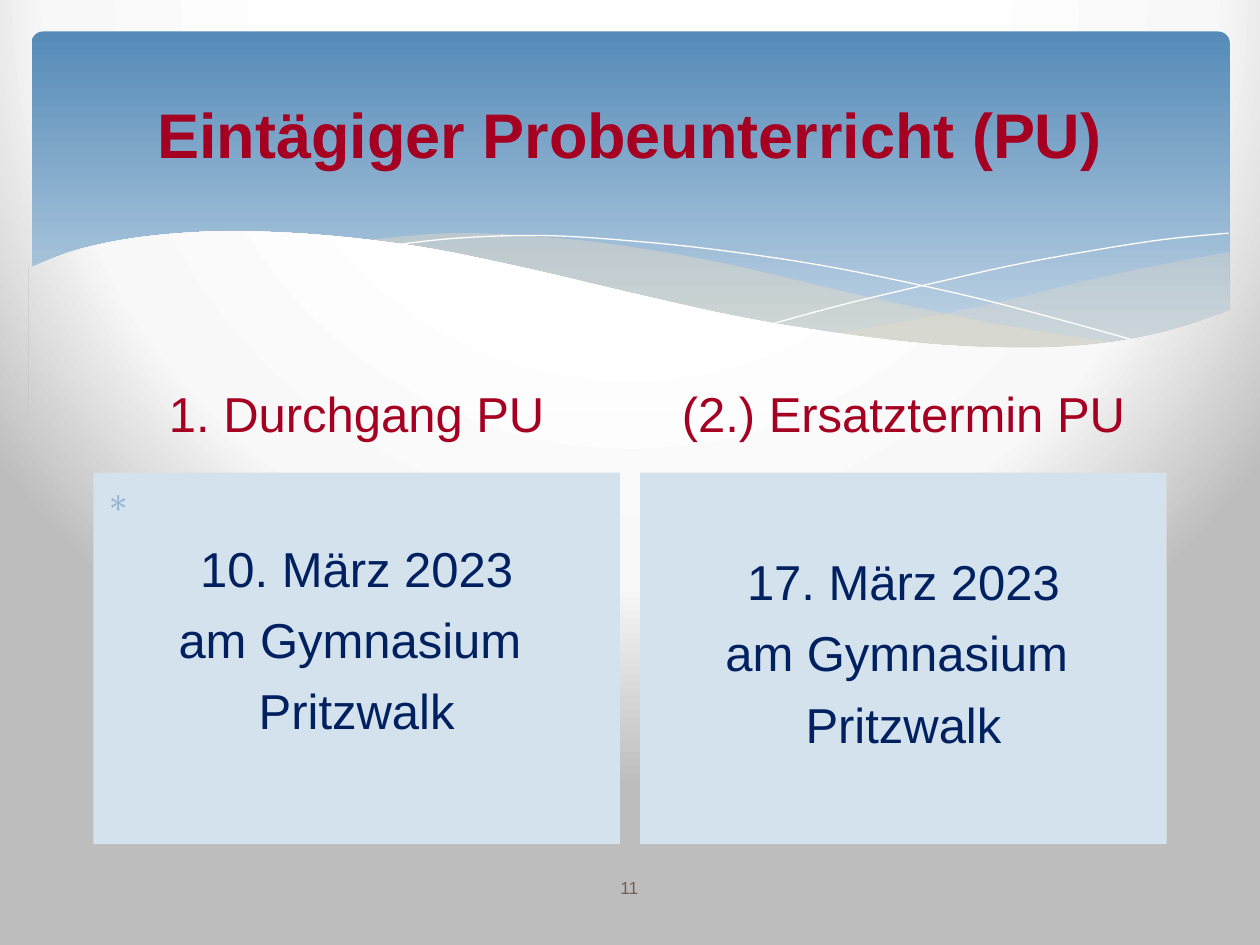
from lxml import etree
from pptx import Presentation
from pptx.dml.color import RGBColor
from pptx.enum.shapes import MSO_SHAPE as Shape
from pptx.enum.text import MSO_ANCHOR as Anchor, PP_ALIGN as Align
from pptx.oxml import parse_xml
from pptx.oxml.ns import nsdecls, qn
from pptx.util import Inches, Pt

COLORS = {
    "red": "A50021", "navy": "002060", "brown": "775F55",
    "panel": "D4E2ED", "bullet": "94B6D2", "sand": "EBDDC3", "white": "FFFFFF",
    "header_top": "558BB8", "header_bottom": "BFD3E4",
}
BACKDROP_STOPS = [(40, "FFFFFF"), (74, "F8F8F8"), (100, "BDBDBD")]
FONT = "Arial"

# Curves are listed from left to right, in inches.
RIGHT_BAND_TOP = [(6.61, 2.65), (7.29, 2.53), (8.05, 2.37), (8.61, 2.23),
                  (9.21, 2.1), (9.76, 2)]
RIGHT_BAND_BOTTOM = [(6.61, 2.65), (7.19, 2.72), (7.81, 2.77), (8.44, 2.77),
                     (8.97, 2.7), (9.42, 2.59), (9.76, 2.47)]
LONG_BAND_TOP = [(2.86, 1.91), (3.61, 1.85), (4.42, 1.89), (5.14, 1.98),
                 (5.84, 2.11), (6.68, 2.31), (7.41, 2.47), (8.07, 2.6),
                 (8.93, 2.73)]
LONG_BAND_BOTTOM = [(2.86, 1.91), (3.62, 2.03), (4.49, 2.22), (5.3, 2.4),
                    (6.01, 2.55), (6.8, 2.68), (7.48, 2.76), (8.18, 2.78),
                    (8.93, 2.73)]
FALLING_LINE = [(3.09, 1.95), (3.63, 1.89), (4.33, 1.87), (5.1, 1.92),
                (5.82, 2), (6.65, 2.13), (7.6, 2.33), (8.31, 2.51), (9.07, 2.72)]
RISING_LINE = [(6.13, 2.57), (6.72, 2.41), (7.48, 2.23), (8.06, 2.1),
               (8.66, 1.99), (9.24, 1.9), (9.75, 1.85)]
WAVE_TOP = [(0.23, 2.13), (0.59, 1.99), (1.06, 1.89), (1.61, 1.84), (2.11, 1.84),
            (2.71, 1.88), (3.4, 1.97), (4.18, 2.13), (5.03, 2.33), (5.79, 2.5),
            (6.48, 2.62), (7.26, 2.72), (7.93, 2.76), (8.5, 2.75), (8.99, 2.69),
            (9.4, 2.59), (9.77, 2.46)]
WAVE_BOTTOM = [(0.23, 3.29), (9.77, 3.29)]


def rgb(name):
    return RGBColor.from_string(COLORS[name])


def box(left, top, width, height):
    return [Inches(v) for v in (left, top, width, height)]


def smooth(points, steps=6):
    """Run a Catmull-Rom curve through the points."""
    padded = [points[0], *points, points[-1]]
    curve = [points[0]]
    for a, b, c, d in zip(padded, padded[1:], padded[2:], padded[3:]):
        for step in range(1, steps + 1):
            t = step / steps
            curve.append(tuple(
                0.5 * (2 * q + (r - p) * t + (2 * p - 5 * q + 4 * r - s) * t ** 2
                       + (3 * q - p - 3 * r + s) * t ** 3)
                for p, q, r, s in zip(a, b, c, d)))
    return curve


def add_outline(slide, points, close):
    corners = [(int(Inches(x)), int(Inches(y))) for x, y in points]
    builder = slide.shapes.build_freeform(*corners[0])
    builder.add_line_segments(corners[1:], close=close)
    outline = builder.convert_to_shape()
    outline.shadow.inherit = False
    return outline


def add_band(slide, top, bottom, opacity):
    band = add_outline(slide, smooth(top) + smooth(bottom)[::-1], True)
    band.fill.solid()
    band.fill.fore_color.rgb = rgb("sand")
    band.line.fill.background()
    sand = band.fill._xPr.find(".//" + qn("a:srgbClr"))
    etree.SubElement(sand, qn("a:alpha"), val=str(opacity * 1000))


def add_hairline(slide, points):
    hairline = add_outline(slide, smooth(points), False)
    hairline.fill.background()
    hairline.line.color.rgb = rgb("white")
    hairline.line.width = Pt(0)


def add_backdrop_wave(slide):
    """Cover the foot of the header with the slide's own background."""
    wave = add_outline(slide, smooth(WAVE_TOP) + WAVE_BOTTOM[::-1], True)
    wave.line.fill.background()
    element = wave._element
    element.remove(element.find(qn("p:style")))
    element.set("useBgFill", "1")


def set_backdrop(slide):
    slide.background.fill.gradient()
    stops = "".join(f'<a:gs pos="{pos * 1000}"><a:srgbClr val="{color}"/></a:gs>'
                    for pos, color in BACKDROP_STOPS)
    radial = parse_xml(
        f'<a:gradFill {nsdecls("a")} rotWithShape="1"><a:gsLst>{stops}</a:gsLst>'
        '<a:path path="circle"><a:fillToRect l="20000" t="-40000" r="20000" '
        'b="140000"/></a:path></a:gradFill>')
    linear = slide._element.find(".//" + qn("a:gradFill"))
    linear.getparent().replace(linear, radial)


def add_header(slide):
    header = slide.shapes.add_shape(Shape.ROUNDED_RECTANGLE, *box(0.25, 0.25, 9.51, 2.7))
    header.adjustments[0] = 0.034
    header.shadow.inherit = False
    header.line.fill.background()
    header.fill.gradient()
    header.fill.gradient_angle = 270
    shades = [("header_top", 0), ("header_bottom", 0.9)]
    for stop, (color, position) in zip(header.fill.gradient_stops, shades):
        stop.color.rgb = rgb(color)
        stop.position = position


def write(paragraph, text, size, color, bold=False, align=Align.CENTER):
    paragraph.alignment = align
    run = paragraph.add_run()
    run.text = text
    run.font.name = FONT
    run.font.size = Pt(size)
    run.font.bold = bold
    run.font.color.rgb = rgb(color)


def add_label(slide, area, text, size, color, bold=False):
    frame = slide.shapes.add_textbox(*box(*area)).text_frame
    frame.word_wrap = True
    frame.vertical_anchor = Anchor.MIDDLE
    write(frame.paragraphs[0], text, size, color, bold)


def add_star_bullet(paragraph):
    write(paragraph, " ", 20, "brown", align=Align.LEFT)
    props = paragraph._p.get_or_add_pPr()
    props.set("marL", str(Inches(0.3)))
    props.set("indent", str(-Inches(0.3)))
    bullet_color = etree.SubElement(props, qn("a:buClr"))
    etree.SubElement(bullet_color, qn("a:srgbClr"), val=COLORS["bullet"])
    etree.SubElement(props, qn("a:buChar"), char="∗")


def add_date_panel(slide, left, date, top_inset, starred):
    panel = slide.shapes.add_shape(Shape.RECTANGLE, *box(left, 3.75, 4.18, 2.95))
    panel.shadow.inherit = False
    panel.fill.solid()
    panel.fill.fore_color.rgb = rgb("panel")
    panel.line.fill.background()
    frame = panel.text_frame
    frame.word_wrap = True
    frame.vertical_anchor = Anchor.TOP
    frame.margin_top = Inches(top_inset)
    paragraph = frame.paragraphs[0]
    if starred:
        add_star_bullet(paragraph)
        paragraph = frame.add_paragraph()
        paragraph.space_before = Pt(7)
    write(paragraph, date, 28, "navy")
    for line in ("am Gymnasium ", "Pritzwalk"):
        paragraph = frame.add_paragraph()
        paragraph.space_before = Pt(7)
        write(paragraph, line, 28, "navy")


def main():
    deck = Presentation()
    deck.slide_width, deck.slide_height = Inches(10), Inches(7.5)
    slide = deck.slides.add_slide(deck.slide_layouts[6])
    set_backdrop(slide)
    add_header(slide)
    add_band(slide, RIGHT_BAND_TOP, RIGHT_BAND_BOTTOM, 29)
    add_band(slide, LONG_BAND_TOP, LONG_BAND_BOTTOM, 40)
    add_hairline(slide, FALLING_LINE)
    add_hairline(slide, RISING_LINE)
    add_backdrop_wave(slide)

    add_label(slide, (0.5, 0.37, 9, 1.37), "Eintägiger Probeunterricht (PU)", 36, "red", True)
    rounds = [
        (0.74, "1. Durchgang PU", "10. März 2023", 0.09, True),
        (5.08, "(2.) Ersatztermin PU", "17. März 2023", 0.63, False),
    ]
    for left, heading, date, top_inset, starred in rounds:
        add_label(slide, (left, 2.93, 4.18, 0.7), heading, 28, "red")
        add_date_panel(slide, left, date, top_inset, starred)
    add_label(slide, (4.36, 6.84, 1.27, 0.4), "11", 10, "brown")
    deck.save("out.pptx")


if __name__ == "__main__":
    main()
